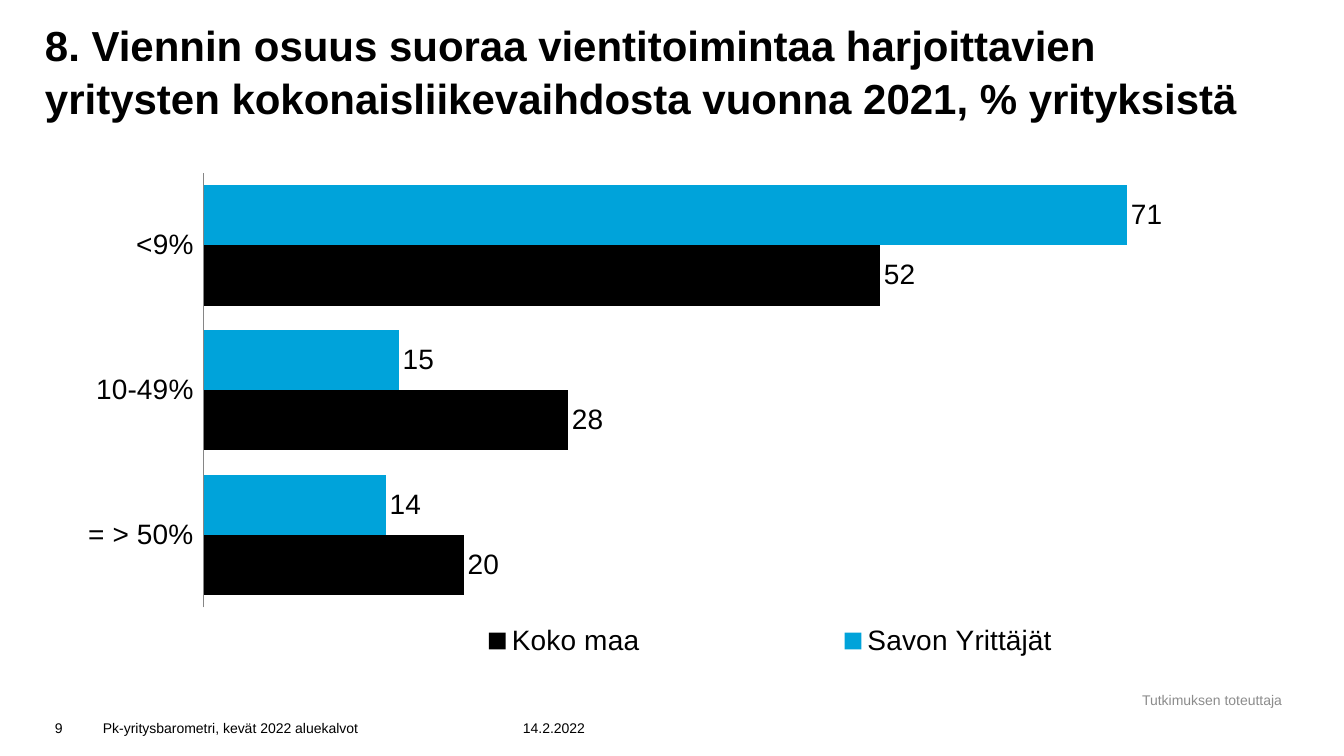
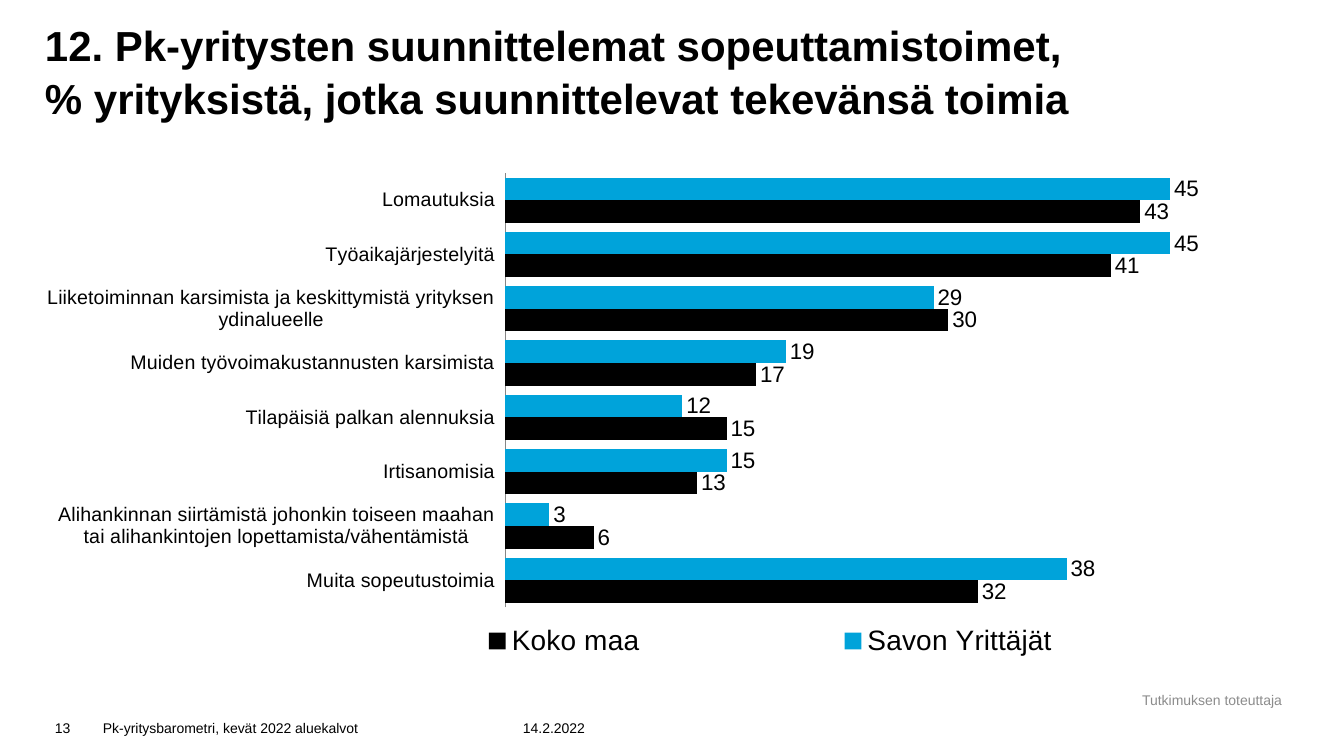
from lxml.etree import SubElement
from pptx import Presentation
from pptx.chart.data import CategoryChartData
from pptx.dml.color import RGBColor
from pptx.enum.chart import XL_CHART_TYPE, XL_LABEL_POSITION, XL_LEGEND_POSITION, XL_TICK_LABEL_POSITION, XL_TICK_MARK
from pptx.enum.text import MSO_ANCHOR, PP_ALIGN
from pptx.oxml.ns import qn
from pptx.util import Emu, Pt

COLORS = {"text": "000000", "muted": "8C8C8C", "axis": "868686",
          "region": "00A3DA", "country": "000000"}
FONT = "Arial"
TITLE_BOX = (45, 0, 1240, 123)
CHART_BOX = (45, 156, 1240, 516)
LEGEND_LAYOUT = (0.2, 0.89, 0.77, 0.1)
FOOTER_TOP, FOOTER_HEIGHT = 706, 35
SERIES = [("Savon Yrittäjät", "region"), ("Koko maa", "country")]

SLIDES = [
    {
        "page": "9",
        "title": "8. Viennin osuus suoraa vientitoimintaa harjoittavien\v"
                 "yritysten kokonaisliikevaihdosta vuonna 2021, % yrityksistä",
        "rows": [("<9%", 71, 52), ("10-49%", 15, 28), ("= > 50%", 14, 20)],
        "plot": (0.128, 0.033, 0.839, 0.842),
        "max": 80, "category_size": 20, "label_size": 20,
    },
    {
        "page": "13",
        "title": "12. Pk-yritysten suunnittelemat sopeuttamistoimet,\v"
                 "% yrityksistä, jotka suunnittelevat tekevänsä toimia",
        "rows": [
            ("Lomautuksia", 45, 43),
            ("Työaikajärjestelyitä", 45, 41),
            ("Liiketoiminnan karsimista ja keskittymistä yrityksen ydinalueelle", 29, 30),
            ("Muiden työvoimakustannusten karsimista", 19, 17),
            ("Tilapäisiä palkan alennuksia", 12, 15),
            ("Irtisanomisia", 15, 13),
            ("Alihankinnan siirtämistä johonkin toiseen maahan tai "
             "alihankintojen lopettamista/vähentämistä", 3, 6),
            ("Muita sopeutustoimia", 38, 32),
        ],
        "plot": (0.371, 0.033, 0.596, 0.842),
        "max": 50, "category_size": 14, "label_size": 16,
    },
]


def px(n):
    return Emu(round(n * 914400 / 100.8))


def rgb(name):
    return RGBColor.from_string(COLORS[name])


def set_font(font, size, color="text", bold=False):
    font.name, font.size, font.bold = FONT, Pt(size), bold
    font.color.rgb = rgb(color)


def add_text(s, text, box, size=10, color="text", bold=False, align=PP_ALIGN.LEFT,
             anchor=MSO_ANCHOR.BOTTOM, inset=None, spacing=None):
    tf = s.shapes.add_textbox(*map(px, box)).text_frame
    tf.word_wrap = True
    tf.vertical_anchor = anchor
    if inset is not None:
        tf.margin_left = tf.margin_top = tf.margin_right = tf.margin_bottom = px(inset)
    p = tf.paragraphs[0]
    p.text, p.alignment, p.line_spacing = text, align, spacing
    for r in p.runs:
        set_font(r.font, size, color, bold)


def add_layout(parent, box, inner=False):
    for old in parent.findall(qn("c:layout")):
        parent.remove(old)
    layout = SubElement(parent, qn("c:layout"))
    manual = SubElement(layout, qn("c:manualLayout"))
    items = [("layoutTarget", "inner")] if inner else []
    items += [("xMode", "edge"), ("yMode", "edge"), *zip("xywh", box)]
    for tag, value in items:
        SubElement(manual, qn(f"c:{tag}")).set("val", str(value))
    parent.remove(layout)
    parent.insert(0 if inner else 1, layout)


def add_bar_chart(s, content):
    categories, *columns = zip(*content["rows"])
    data = CategoryChartData(number_format="#,##0")
    data.categories = categories
    for (name, _), values in zip(SERIES, columns):
        data.add_series(name, values)
    chart = s.shapes.add_chart(XL_CHART_TYPE.BAR_CLUSTERED, *map(px, CHART_BOX), data).chart
    chart.has_title = False
    set_font(chart.font, 20)

    cat, val = chart.category_axis, chart.value_axis
    cat.reverse_order = True
    cat.major_tick_mark = cat.minor_tick_mark = XL_TICK_MARK.NONE
    cat.tick_label_position = XL_TICK_LABEL_POSITION.LOW
    cat.format.line.color.rgb = rgb("axis")
    cat.format.line.width = Pt(0.75)
    set_font(cat.tick_labels.font, content["category_size"])
    val.minimum_scale, val.maximum_scale = 0, content["max"]
    val.has_major_gridlines = False
    val.visible = False

    plot = chart.plots[0]
    plot.gap_width, plot.overlap = 40, 0
    plot.vary_by_categories = False
    for series, (_, color) in zip(plot.series, SERIES):
        series.format.fill.solid()
        series.format.fill.fore_color.rgb = rgb(color)
        labels = series.data_labels
        labels.show_value = True
        labels.position = XL_LABEL_POSITION.OUTSIDE_END
        labels.number_format, labels.number_format_is_linked = "#,##0", False
        set_font(labels.font, content["label_size"])

    chart.has_legend = True
    legend = chart.legend
    legend.position = XL_LEGEND_POSITION.RIGHT
    legend.include_in_layout = False
    set_font(legend.font, 20)
    chart_xml = chart.element.find(qn("c:chart"))
    add_layout(chart_xml.find(qn("c:plotArea")), content["plot"], inner=True)
    add_layout(chart_xml.find(qn("c:legend")), LEGEND_LAYOUT)


def add_footer(s, page):
    add_text(s, "Tutkimuksen toteuttaja", (1125, 687, 174, 26), color="muted",
             align=PP_ALIGN.CENTER, anchor=MSO_ANCHOR.MIDDLE)
    for text, left, width in [(page, 45, 47),
                              ("Pk-yritysbarometri, kevät 2022 aluekalvot", 93, 420),
                              ("14.2.2022", 513, 88)]:
        add_text(s, text, (left, FOOTER_TOP, width, FOOTER_HEIGHT))


def main():
    prs = Presentation()
    prs.slide_width, prs.slide_height = px(1344), px(756)
    for content in SLIDES:
        s = prs.slides.add_slide(prs.slide_layouts[6])
        add_text(s, content["title"], TITLE_BOX, size=30, bold=True, inset=0, spacing=1.05)
        add_bar_chart(s, content)
        add_footer(s, content["page"])
    prs.save("out.pptx")


if __name__ == "__main__":
    main()
